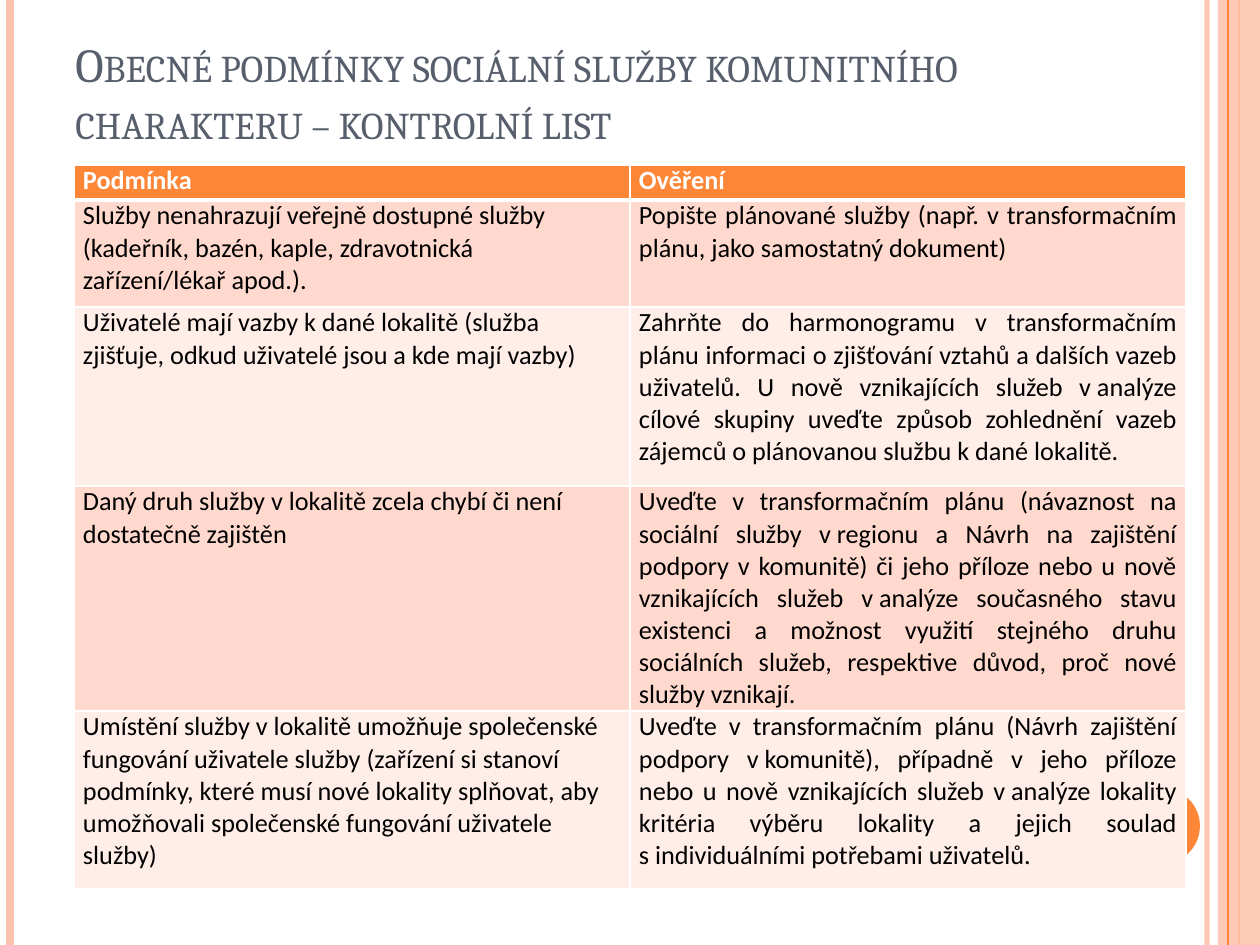
import pptx
import pptx.dml.color
import pptx.enum.shapes
import pptx.enum.text
import pptx.oxml.ns
import pptx.util
from lxml import etree

RGB = pptx.dml.color.RGBColor
WHITE = RGB(0xFF, 0xFF, 0xFF)
BLACK = RGB(0, 0, 0)
ORANGE = RGB(0xFE, 0x86, 0x37)
PEACH = RGB(0xFE, 0xC3, 0xAE)
BAND_DARK = RGB(0xFF, 0xD9, 0xCE)
BAND_LIGHT = RGB(0xFF, 0xED, 0xE8)
SLATE = RGB(0x57, 0x5F, 0x6D)

SCALE = 914400 // 126
WIDTH, HEIGHT = 1260, 945

TITLE = "Obecné podmínky sociální služby komunitního charakteru – kontrolní list"
TITLE_BOX = (63, 38, 1029, 117)

# x, colour, width in points, opacity in percent
STRIPES_BELOW = [(1207, PEACH, 3, 93), (10, PEACH, 4.5, 100), (1239, ORANGE, 1.5, 100)]
STRIPES_ABOVE = [(1228, ORANGE, 0.75, 100)]
SIDE_BAND = (1218, 0, 42, HEIGHT)
DISC = (1124, 788, 76, 76)

TABLE_LEFT, TABLE_TOP, COLUMN_WIDTH = 74, 165, 556
ROW_HEIGHTS = [35, 107, 179, 225, 178]
NO_BREAK_SPACE = chr(160)
# "~" stands for a no-break space
ROWS = [
    ("Podmínka", "Ověření"),
    ("Služby nenahrazují veřejně dostupné služby (kadeřník, bazén, kaple, "
     "zdravotnická zařízení/lékař apod.).",
     "Popište plánované služby (např. v transformačním plánu, jako samostatný dokument)"),
    ("Uživatelé mají vazby k~dané lokalitě (služba zjišťuje, odkud uživatelé jsou "
     "a kde mají vazby)",
     "Zahrňte do harmonogramu v transformačním plánu informaci o zjišťování vztahů "
     "a dalších vazeb uživatelů. U nově vznikajících služeb v~analýze cílové skupiny "
     "uveďte způsob zohlednění vazeb zájemců o plánovanou službu k~dané lokalitě."),
    ("Daný druh služby v~lokalitě zcela chybí či není dostatečně zajištěn",
     "Uveďte v transformačním plánu (návaznost na sociální služby v~regionu a Návrh "
     "na zajištění podpory v komunitě) či jeho příloze nebo u nově vznikajících služeb "
     "v~analýze současného stavu existenci a možnost využití stejného druhu sociálních "
     "služeb, respektive důvod, proč nové služby vznikají."),
    ("Umístění služby v~lokalitě umožňuje společenské fungování uživatele služby "
     "(zařízení si stanoví podmínky, které musí nové lokality splňovat, aby umožňovali "
     "společenské fungování uživatele služby)",
     "Uveďte v transformačním plánu (Návrh zajištění podpory v~komunitě), případně "
     "v jeho příloze nebo u nově vznikajících služeb v~analýze lokality kritéria výběru "
     "lokality a jejich soulad s~individuálními potřebami uživatelů."),
]


def px(n):
    return pptx.util.Emu(n * SCALE)


def box(lengths):
    return [px(n) for n in lengths]


def sub(parent, tag, **attrs):
    return etree.SubElement(parent, pptx.oxml.ns.qn(tag), attrs)


def set_opacity(sp, percent):
    """Make the first solid colour of the shape (its fill or line) translucent."""
    color = next(sp._element.spPr.iter(pptx.oxml.ns.qn("a:srgbClr")))
    sub(color, "a:alpha", val=str(percent * 1000))


def add_stripe(slide, x, color, width, opacity):
    line = slide.shapes.add_connector(
        pptx.enum.shapes.MSO_CONNECTOR.STRAIGHT, px(x), 0, px(x), px(HEIGHT))
    line.line.color.rgb = color
    line.line.width = pptx.util.Pt(width)
    if opacity < 100:
        set_opacity(line, opacity)
    sub(line._element.spPr, "a:effectLst")


def add_plain_shape(slide, kind, lengths, color):
    sp = slide.shapes.add_shape(kind, *box(lengths))
    sp.shadow.inherit = False
    sp.fill.solid()
    sp.fill.fore_color.rgb = color
    sp.line.fill.background()
    return sp


def add_title(slide):
    tf = slide.shapes.add_textbox(*box(TITLE_BOX)).text_frame
    tf.word_wrap = True
    tf.vertical_anchor = pptx.enum.text.MSO_ANCHOR.BOTTOM
    r = tf.paragraphs[0].add_run()
    r.text = TITLE
    r.font.name = "Cambria"
    r.font.size = pptx.util.Pt(27)
    r.font.color.rgb = SLATE
    r._r.get_or_add_rPr().set("cap", "small")


def set_borders(cell, top, bottom):
    """Draw white cell borders; top and bottom widths are in points."""
    tcPr = cell._tc.get_or_add_tcPr()
    for side, width in (("L", 1), ("R", 1), ("T", top), ("B", bottom)):
        ln = sub(tcPr, "a:ln" + side, w=str(pptx.util.Pt(width)))
        sub(sub(ln, "a:solidFill"), "a:srgbClr", val=str(WHITE))


def fill_cell(cell, text, row, col):
    header = row == 0
    set_borders(cell, top=3 if row == 1 else 1, bottom=3 if header else 1)
    cell.fill.solid()
    cell.fill.fore_color.rgb = ORANGE if header else BAND_DARK if row % 2 else BAND_LIGHT
    cell.margin_left = cell.margin_right = px(9)
    cell.margin_top = cell.margin_bottom = 0
    cell.text = text.replace("~", NO_BREAK_SPACE)
    p = cell.text_frame.paragraphs[0]
    justified = header or col == 1
    p.alignment = (pptx.enum.text.PP_ALIGN.JUSTIFY if justified
                   else pptx.enum.text.PP_ALIGN.LEFT)
    p.font.name = "Calibri"
    p.font.size = pptx.util.Pt(15)
    p.font.bold = header
    p.font.color.rgb = WHITE if header else BLACK


def add_checklist(slide):
    columns = len(ROWS[0])
    table = slide.shapes.add_table(len(ROWS), columns, *box(
        (TABLE_LEFT, TABLE_TOP, columns * COLUMN_WIDTH, sum(ROW_HEIGHTS)))).table
    for column in table.columns:
        column.width = px(COLUMN_WIDTH)
    for row, (height, texts) in enumerate(zip(ROW_HEIGHTS, ROWS)):
        table.rows[row].height = px(height)
        for col, text in enumerate(texts):
            fill_cell(table.cell(row, col), text, row, col)


def main():
    prs = pptx.Presentation()
    prs.slide_width, prs.slide_height = px(WIDTH), px(HEIGHT)
    slide = prs.slides.add_slide(prs.slide_layouts[6])
    shape_kinds = pptx.enum.shapes.MSO_SHAPE
    for stripe in STRIPES_BELOW:
        add_stripe(slide, *stripe)
    set_opacity(add_plain_shape(slide, shape_kinds.RECTANGLE, SIDE_BAND, PEACH), 87)
    for stripe in STRIPES_ABOVE:
        add_stripe(slide, *stripe)
    add_plain_shape(slide, shape_kinds.OVAL, DISC, ORANGE)
    add_title(slide)
    add_checklist(slide)
    prs.save("out.pptx")


if __name__ == "__main__":
    main()
